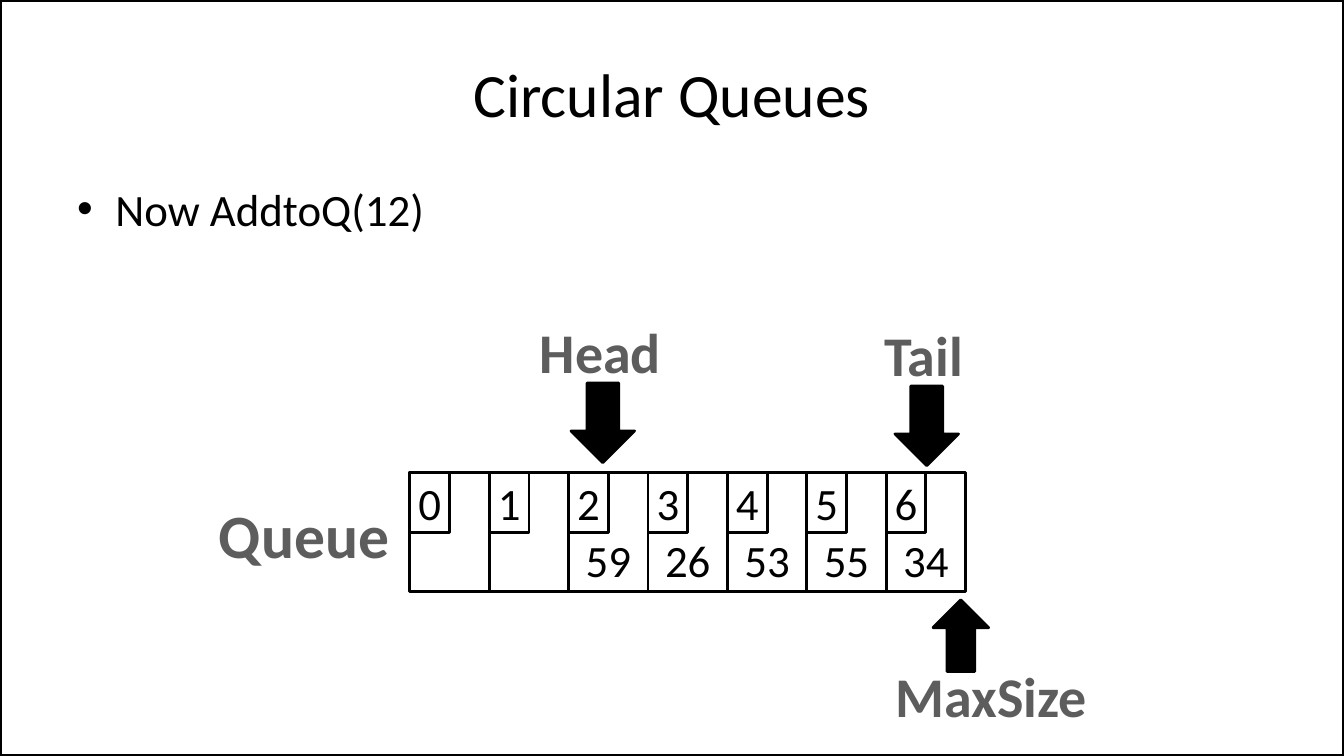
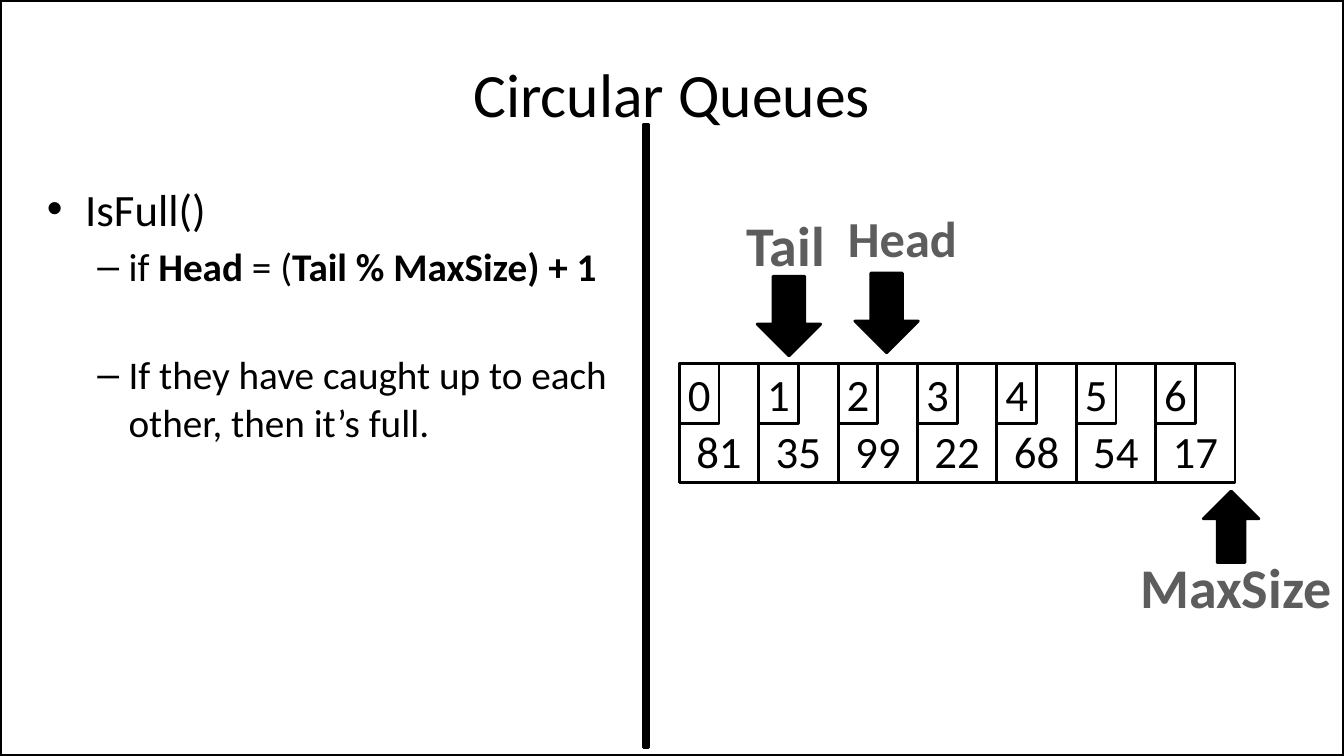
from dataclasses import dataclass

from lxml.etree import SubElement
from pptx import Presentation
from pptx.dml.color import RGBColor
from pptx.enum.shapes import MSO_SHAPE
from pptx.enum.text import MSO_ANCHOR, PP_ALIGN
from pptx.oxml.ns import qn
from pptx.util import Cm, Inches, Pt


@dataclass(frozen=True)
class Theme:
    font: str = "Calibri"
    bullet_font: str = "Arial"
    ink: RGBColor = RGBColor(0x00, 0x00, 0x00)
    paper: RGBColor = RGBColor(0xFF, 0xFF, 0xFF)
    label: RGBColor = RGBColor(0x5D, 0x5D, 0x5D)
    title_size: int = 44
    body_size: int = 32
    detail_size: int = 28
    name_size: int = 44
    pointer_size: int = 40
    small_pointer_size: int = 36
    border_width: int = 3
    line_width: int = 2
    space_before: int = 5
    section_space: int = 44


THEME = Theme()
WIDTH, HEIGHT = Inches(13.33), Inches(7.5)
COLUMN, ROW = WIDTH / 20, HEIGHT / 30
CELL_WIDTH, CELL_HEIGHT = Cm(2), Cm(3)
INDEX_WIDTH, INDEX_HEIGHT = Cm(1), Cm(1.5)
CELL_INSET = Inches(0.05)
LABEL_ROWS = 3.08
# bullet character, left margin, hanging indent
BULLETS = (("•", Inches(0.38), Inches(0.38)), ("–", Inches(0.81), Inches(0.31)))
CENTERED = {"alignment": PP_ALIGN.CENTER}


@dataclass(frozen=True)
class Pointer:
    """A labelled arrow; columns and width count queue cells, gap counts grid rows."""
    name: str
    column: float
    label_column: float
    label_width: float
    gap: float
    size: int = THEME.pointer_size
    below: bool = False


@dataclass(frozen=True)
class Item:
    """A bullet; runs are pairs of text and bold."""
    level: int
    runs: tuple
    space: int = THEME.space_before


def apply_format(target, values):
    for name, value in values.items():
        setattr(target, name, value)


def emu(*lengths):
    return [round(length) for length in lengths]


def grid(left, top, width, height):
    return emu(left * COLUMN, top * ROW, width * COLUMN, height * ROW)


def add_run(paragraph, text, size, bold=False, color=THEME.ink):
    run = paragraph.add_run()
    run.text = text
    apply_format(run.font, {"name": THEME.font, "size": Pt(size), "bold": bold})
    run.font.color.rgb = color


def add_shape(slide, kind, box, fill=None, line_width=THEME.line_width):
    shape = slide.shapes.add_shape(kind, *box)
    shape.shadow.inherit = False
    if fill is None:
        shape.fill.background()
    else:
        shape.fill.solid()
        shape.fill.fore_color.rgb = fill
    shape.line.color.rgb = THEME.ink
    shape.line.width = Pt(line_width)
    return shape


def add_cell(slide, box, text, anchor):
    shape = add_shape(slide, MSO_SHAPE.RECTANGLE, box)
    if text:
        apply_format(shape.text_frame, {
            "margin_left": 0, "margin_right": 0, "margin_top": 0,
            "margin_bottom": CELL_INSET if anchor == MSO_ANCHOR.BOTTOM else 0,
            "vertical_anchor": anchor, "word_wrap": False})
        paragraph = shape.text_frame.paragraphs[0]
        apply_format(paragraph, CENTERED)
        add_run(paragraph, text, THEME.body_size)


def add_line_of_text(slide, box, text, size, bold=False, color=THEME.ink,
                     anchor=MSO_ANCHOR.TOP):
    frame = slide.shapes.add_textbox(*box).text_frame
    apply_format(frame, {"word_wrap": False, "vertical_anchor": anchor})
    apply_format(frame.paragraphs[0], CENTERED)
    add_run(frame.paragraphs[0], text, size, bold, color)


def add_label(slide, box, text, size):
    add_line_of_text(slide, box, text, size, True, THEME.label)


def set_bullet(paragraph, level):
    character, margin, hanging = BULLETS[level]
    properties = paragraph._p.get_or_add_pPr()
    properties.set("marL", str(margin))
    properties.set("indent", str(-hanging))
    SubElement(properties, qn("a:buFont")).set("typeface", THEME.bullet_font)
    SubElement(properties, qn("a:buChar")).set("char", character)


def add_bullets(slide, box, items):
    frame = slide.shapes.add_textbox(*box).text_frame
    frame.word_wrap = True
    for number, item in enumerate(items):
        paragraph = frame.add_paragraph() if number else frame.paragraphs[0]
        set_bullet(paragraph, item.level)
        apply_format(paragraph, {"level": item.level,
                                 "space_before": Pt(item.space if number else 0)})
        size = THEME.detail_size if item.level else THEME.body_size
        for text, bold in item.runs:
            add_run(paragraph, text, size, bold)


def add_pointer(slide, left, top, pointer):
    if pointer.below:
        kind, width, rows, label_offset = MSO_SHAPE.UP_ARROW, 0.7, 2.84, 2.24
        arrow_top = top + CELL_HEIGHT + pointer.gap * ROW
    else:
        kind, width, rows, label_offset = MSO_SHAPE.DOWN_ARROW, 0.8, 3.16, -2.8
        arrow_top = top - (pointer.gap + rows) * ROW

    def centered_box(column, box_width, box_top, box_rows):
        return emu(left + (column - box_width / 2) * CELL_WIDTH, box_top,
                   box_width * CELL_WIDTH, box_rows * ROW)

    add_label(slide, centered_box(pointer.label_column, pointer.label_width,
                                  arrow_top + label_offset * ROW, LABEL_ROWS),
              pointer.name, pointer.size)
    add_shape(slide, kind, centered_box(pointer.column, width, arrow_top, rows),
              THEME.ink)


def add_queue(slide, column, row, values, pointers):
    left, top = emu(column * COLUMN, row * ROW)
    for index, value in enumerate(values):
        cell_left = left + index * CELL_WIDTH
        add_cell(slide, (cell_left, top, CELL_WIDTH, CELL_HEIGHT), value,
                 MSO_ANCHOR.BOTTOM)
        add_cell(slide, (cell_left, top, INDEX_WIDTH, INDEX_HEIGHT), str(index),
                 MSO_ANCHOR.MIDDLE)
    for pointer in pointers:
        add_pointer(slide, left, top, pointer)


def add_slide(presentation, title):
    """Add a blank slide with the shared frame and title."""
    slide = presentation.slides.add_slide(presentation.slide_layouts[6])
    slide.background.fill.solid()
    slide.background.fill.fore_color.rgb = THEME.paper
    add_shape(slide, MSO_SHAPE.RECTANGLE, (0, 0, WIDTH, HEIGHT),
              line_width=THEME.border_width)
    add_line_of_text(slide, grid(1, 1.2, 18, 5), title, THEME.title_size,
                     anchor=MSO_ANCHOR.MIDDLE)
    return slide


def add_insertion_slide(presentation):
    slide = add_slide(presentation, "Circular Queues")
    add_bullets(slide, grid(1, 7, 18, 19.8), [Item(0, (("Now AddtoQ(12)", False),))])
    add_queue(slide, 6.1, 18.76, ("", "", "59", "26", "53", "55", "34"), (
        Pointer("MaxSize", 6.94, 7.32, 2.69, 0.32, below=True),
        Pointer("Head", 2.43, 2.4, 1.8, 0.4),
        Pointer("Tail", 6.51, 6.47, 1.26, 0.28)))
    add_label(slide, grid(3.09, 19.52, 2.87, 3.36), "Queue", THEME.name_size)


def add_full_queue_slide(presentation):
    slide = add_slide(presentation, "Circular Queues")
    add_bullets(slide, grid(0.55, 7, 9.03, 19.8), [
        Item(0, (("IsFull()", False),)),
        Item(1, (("if ", False), ("Head", True), (" = (", False),
                 ("Tail % MaxSize) + 1", True))),
        Item(1, (("If they have caught up to each other, then it’s full.", False),),
             THEME.section_space)])
    add_queue(slide, 10.11, 14.44, ("81", "35", "99", "22", "68", "54", "17"), (
        Pointer("MaxSize", 6.95, 7.01, 2.69, 0.32, below=True),
        Pointer("Head", 2.61, 2.81, 1.65, 0.44, THEME.small_pointer_size),
        Pointer("Tail", 1.38, 1.34, 1.26, 0.32)))
    add_shape(slide, MSO_SHAPE.RECTANGLE, grid(9.57, 4.92, 0.08, 24.76), THEME.ink)


def main():
    presentation = Presentation()
    apply_format(presentation, {"slide_width": WIDTH, "slide_height": HEIGHT})
    add_insertion_slide(presentation)
    add_full_queue_slide(presentation)
    presentation.save("out.pptx")


if __name__ == "__main__":
    main()
